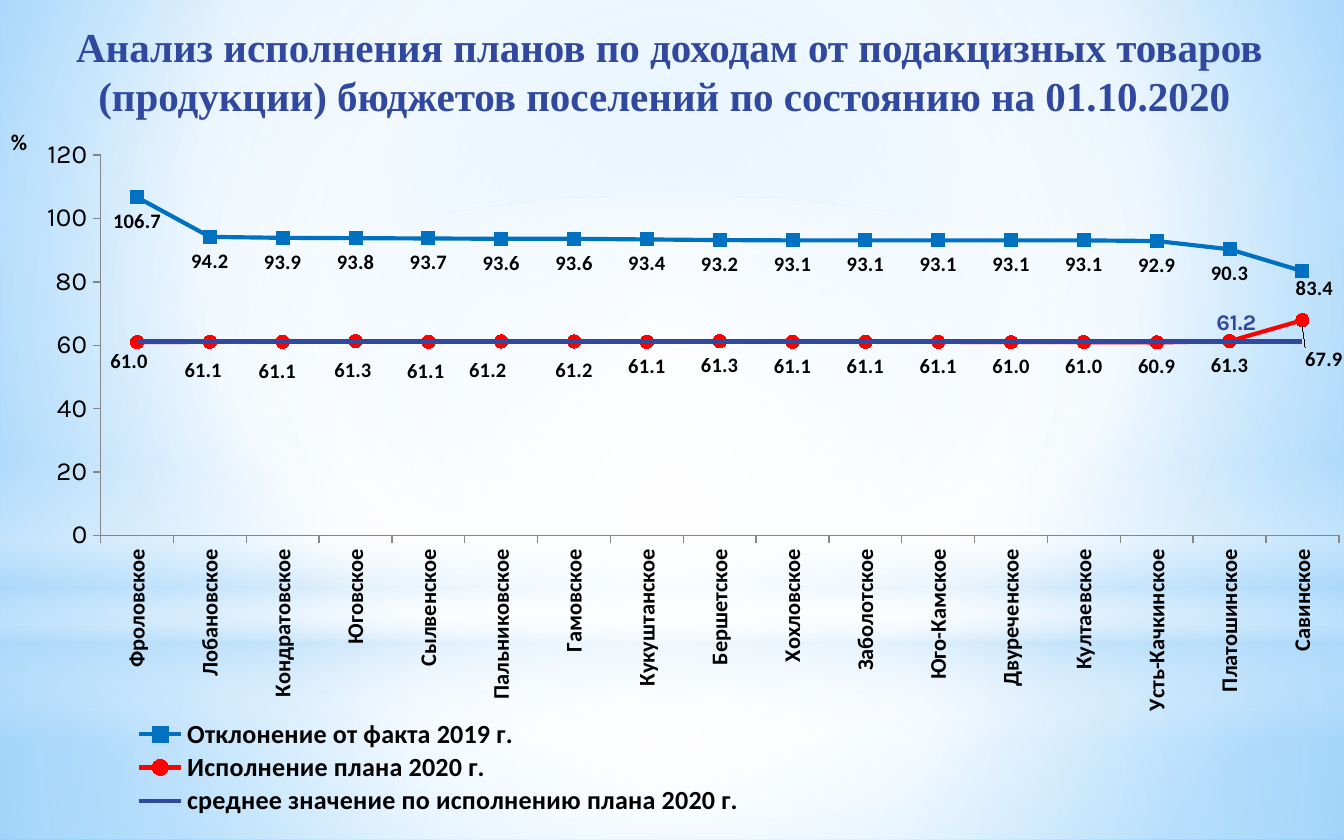
from pptx import Presentation
from pptx import util as u
from pptx.chart.data import CategoryChartData
from pptx.dml.color import RGBColor
from pptx.enum import chart as ch, shapes, text
from pptx.oxml import parse_xml
from pptx.oxml.ns import nsdecls, qn

BLACK = RGBColor(0x00, 0x00, 0x00)
GREY = RGBColor(0x86, 0x86, 0x86)
BLUE = RGBColor(0x00, 0x70, 0xC0)
RED = RGBColor(0xFF, 0x00, 0x00)
INDIGO = RGBColor(0x31, 0x48, 0x9F)
WHITE = RGBColor(0xFF, 0xFF, 0xFF)
SKY = RGBColor(0xB4, 0xDC, 0xFA)
LIGHT = RGBColor(0x9E, 0xD5, 0xFF)
DEEP = RGBColor(0x5B, 0xB9, 0xFF)

SETTLEMENTS = [
    "Фроловское", "Лобановское", "Кондратовское", "Юговское", "Сылвенское",
    "Пальниковское", "Гамовское", "Кукуштанское", "Бершетское", "Хохловское",
    "Заболотское", "Юго-Камское", "Двуреченское", "Култаевское",
    "Усть-Качкинское", "Платошинское", "Савинское"]
DEVIATION = [106.7, 94.2, 93.9, 93.8, 93.7, 93.6, 93.6, 93.4, 93.2,
             93.1, 93.1, 93.1, 93.1, 93.1, 92.9, 90.3, 83.4]
EXECUTION = [61, 61.1, 61.1, 61.3, 61.1, 61.2, 61.2, 61.1, 61.3,
             61.1, 61.1, 61.1, 61, 61, 60.9, 61.3, 67.9]
AVERAGE = [61.2] * len(SETTLEMENTS)
EXECUTION_SHIFTS = {
    0: (-0.006, -0.007), 1: (-0.005, 0.006), 2: (-0.004, 0.007),
    3: (-0.002, 0.006), 4: (-0.002, 0.007), 5: (-0.01, 0.006),
    6: (0, 0.006), 16: (0.016, 0.02)}
CENTRE = (50, 50, 50, 50)
LABEL_FORMAT = "#,##0.0"


def layout_xml(x, y, w=None, h=None, inner=False, edge=True):
    target = '<c:layoutTarget val="inner"/>' if inner else ""
    modes = '<c:xMode val="edge"/><c:yMode val="edge"/>' if edge else ""
    size = f'<c:w val="{w}"/><c:h val="{h}"/>' if w else ""
    return parse_xml(
        f'<c:layout {nsdecls("c")}><c:manualLayout>{target}{modes}'
        f'<c:x val="{x}"/><c:y val="{y}"/>{size}</c:manualLayout></c:layout>')


def set_layout(parent, index, layout):
    for old in parent.findall(qn("c:layout")):
        parent.remove(old)
    parent.insert(index, layout)


class Deck:
    heading_font = "Times New Roman"
    label_font = "Calibri"
    chart_font = "Karla"

    def __init__(self, prs):
        self.s = prs.slides.add_slide(prs.slide_layouts[5])

    def gradient(self, holder, stops, focus=None, angle=0):
        marks = "".join(
            f'<a:gs pos="{pos * 1000}"><a:srgbClr val="{color}">'
            f'<a:alpha val="{alpha * 1000}"/></a:srgbClr></a:gs>'
            for pos, color, alpha in stops)
        if focus:
            rect = " ".join(f'{k}="{v * 1000}"' for k, v in zip("ltrb", focus))
            way = f'<a:path path="circle"><a:fillToRect {rect}/></a:path>'
        else:
            way = f'<a:lin ang="{angle * 60000}" scaled="0"/>'
        solid = holder.find(qn("a:solidFill"))
        holder.replace(solid, parse_xml(
            f'<a:gradFill {nsdecls("a")} rotWithShape="1">'
            f'<a:gsLst>{marks}</a:gsLst>{way}</a:gradFill>'))

    def background(self, stops, focus):
        self.s.background.fill.solid()
        self.s.background.fill.fore_color.rgb = WHITE
        self.gradient(self.s._element.xpath(".//p:bgPr")[0], stops, focus)

    def glow(self, kind, top, height, stops, focus=None, angle=0):
        sp = self.s.shapes.add_shape(kind, 0, u.Inches(top), u.Inches(10), u.Inches(height))
        sp.shadow.inherit = False
        sp.line.fill.background()
        sp.fill.solid()
        self.gradient(sp._element.spPr, stops, focus, angle)

    def font(self, f, size, name, color=BLACK, bold=True):
        f.size, f.name, f.bold = u.Pt(size), name, bold
        f.color.rgb = color

    def title(self, words, left, top, width, height):
        sp = self.s.shapes.title
        self.s.shapes._spTree.append(sp._element)
        sp.left, sp.top = u.Inches(left), u.Inches(top)
        sp.width, sp.height = u.Inches(width), u.Inches(height)
        tf = sp.text_frame
        tf.text = words
        tf.word_wrap = True
        tf.auto_size = text.MSO_AUTO_SIZE.NONE
        tf.vertical_anchor = text.MSO_ANCHOR.TOP
        p = tf.paragraphs[0]
        p.alignment = text.PP_ALIGN.CENTER
        self.font(p.runs[0].font, 22, self.heading_font, INDIGO)

    def line_chart(self, left, top, width, height, names, series):
        data = CategoryChartData(number_format=LABEL_FORMAT)
        data.categories = names
        for name, values in series:
            data.add_series(name, values)
        chart = self.s.shapes.add_chart(
            ch.XL_CHART_TYPE.LINE_MARKERS, u.Inches(left), u.Inches(top),
            u.Inches(width), u.Inches(height), data).chart
        chart.has_title = False
        self.font(chart.font, 18, self.chart_font, bold=False)
        chart.plots[0].vary_by_categories = False
        set_layout(chart._chartSpace.chart.plotArea, 0,
                   layout_xml(0.078, 0.098, 0.922, 0.509, inner=True))
        return chart

    def axes(self, chart, unit):
        cat, val = chart.category_axis, chart.value_axis
        for axis in (cat, val):
            axis.has_major_gridlines = False
            axis.major_tick_mark = ch.XL_TICK_MARK.OUTSIDE
            axis.format.line.color.rgb = GREY
        self.font(cat.tick_labels.font, 12, self.label_font)
        cat._element.find(qn("c:txPr")).find(qn("a:bodyPr")).set("rot", "-5400000")
        self.font(val.tick_labels.font, 14, self.chart_font, bold=False)
        val.tick_labels.number_format = "#,##0"
        val.tick_labels.number_format_is_linked = False
        val.minimum_scale, val.maximum_scale, val.major_unit = 0, 120, 20
        tf = val.axis_title.text_frame
        tf.text = unit
        self.font(tf.paragraphs[0].runs[0].font, 12, self.label_font)
        tf._txBody.find(qn("a:bodyPr")).set("rot", "0")
        set_layout(val.axis_title._element, 1, layout_xml(0.008, 0.055))

    def legend(self, chart):
        chart.has_legend = True
        chart.legend.position = ch.XL_LEGEND_POSITION.BOTTOM
        chart.legend.include_in_layout = False
        self.font(chart.legend.font, 14, self.label_font)
        set_layout(chart.legend._element, 1, layout_xml(0.095, 0.85, 0.47, 0.135))

    def series_style(self, ser, color, marker):
        ser.smooth = False
        ser.format.line.color.rgb = color
        ser.format.line.width = u.Pt(2.25)
        ser.marker.style = marker
        if marker != ch.XL_MARKER_STYLE.NONE:
            ser.marker.size = 7
            ser.marker.format.fill.solid()
            ser.marker.format.fill.fore_color.rgb = color
            ser.marker.format.line.color.rgb = color

    def value_labels(self, ser):
        labels = ser.data_labels
        labels.show_value = True
        labels.number_format = LABEL_FORMAT
        labels.number_format_is_linked = False
        labels.position = ch.XL_LABEL_POSITION.BELOW
        self.font(labels.font, 11, self.label_font)

    def point_label(self, ser, index, shift, position, size, name, color=BLACK):
        label = ser.points[index].data_label
        self.font(label.font, size, name, color)
        label.position = position
        node = ser._element.xpath(f'c:dLbls/c:dLbl[c:idx/@val="{index}"]')[0]
        set_layout(node, 1, layout_xml(*shift, edge=False))
        node.insert(2, parse_xml(
            f'<c:numFmt {nsdecls("c")} formatCode="{LABEL_FORMAT}" sourceLinked="0"/>'))


def main():
    prs = Presentation()
    prs.slide_width, prs.slide_height = u.Inches(10), u.Inches(6.25)
    deck = Deck(prs)
    rect, oval = shapes.MSO_SHAPE.RECTANGLE, shapes.MSO_SHAPE.OVAL
    deck.background([(0, LIGHT, 100), (60, WHITE, 100), (100, DEEP, 100)], (20, 10, 20, 60))
    deck.glow(rect, 4.65, 1.6, [(0, WHITE, 91), (37, WHITE, 76), (100, SKY, 79)], CENTRE)
    deck.glow(rect, 0, 4.65, [(0, WHITE, 89), (48, WHITE, 62), (100, SKY, 79)], CENTRE)
    deck.glow(rect, 3.43, 2.08, [(0, WHITE, 0), (29, WHITE, 30), (45, SKY, 40),
                                 (55, WHITE, 26), (65, SKY, 60), (100, WHITE, 0)], angle=90)
    deck.glow(oval, 1.46, 4.65, [(0, WHITE, 100), (56, WHITE, 0), (100, WHITE, 0)], CENTRE)
    deck.title("Анализ исполнения планов по доходам от подакцизных товаров "
               "(продукции) бюджетов поселений по состоянию на 01.10.2020 ", 0, 0.11, 9.96, 0.52)
    chart = deck.line_chart(-0.03, 0.61, 10.02, 5.56, SETTLEMENTS, [
        ("Отклонение от факта 2019 г.", DEVIATION),
        ("Исполнение плана 2020 г.", EXECUTION),
        ("среднее значение по исполнению плана 2020 г.", AVERAGE)])
    deck.axes(chart, "%")
    deck.legend(chart)
    deviation, execution, average = chart.plots[0].series
    marks, spots = ch.XL_MARKER_STYLE, ch.XL_LABEL_POSITION
    deck.series_style(deviation, BLUE, marks.SQUARE)
    deck.series_style(execution, RED, marks.CIRCLE)
    deck.series_style(average, INDIGO, marks.NONE)
    for ser, shifts in ((deviation, {16: (0.009, -0.009)}), (execution, EXECUTION_SHIFTS)):
        deck.value_labels(ser)
        for index, shift in shifts.items():
            deck.point_label(ser, index, shift, spots.BELOW, 11, deck.label_font)
    average.data_labels.show_value = False
    deck.point_label(average, 15, (0.005, 0), spots.ABOVE, 12, deck.chart_font, INDIGO)
    prs.save("out.pptx")


if __name__ == "__main__":
    main()
